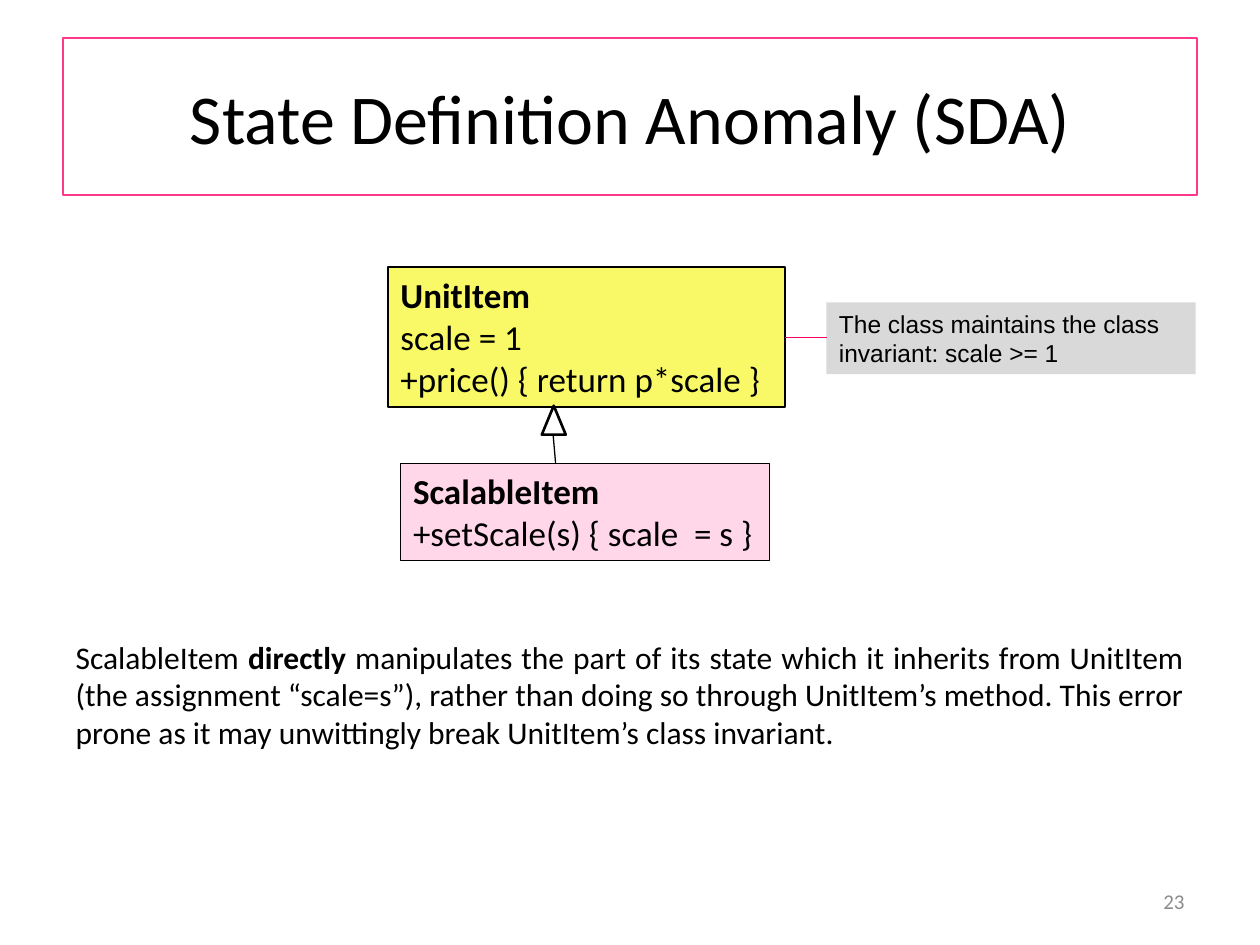
"""Build the State Definition Anomaly slide on a grid of 100 columns by 75 rows."""
from pptx import Presentation
from pptx import util as u
from pptx.dml.color import RGBColor
from pptx.enum import shapes, text
from pptx.oxml import ns, xmlchemy

CELL = u.Inches(0.1)
COLUMNS, ROWS = 100, 75
MARGIN, CONTENT = 5, 90

BLACK = RGBColor(0x00, 0x00, 0x00)
GREY = RGBColor(0x8C, 0x8C, 0x8C)
SILVER = RGBColor(0xD9, 0xD9, 0xD9)
YELLOW = RGBColor(0xF9, 0xF9, 0x67)
ROSE = RGBColor(0xFF, 0xD7, 0xE8)
PINK = RGBColor(0xFF, 0x38, 0x8C)
CRIMSON = RGBColor(0xF9, 0x00, 0x69)

TITLE = "State Definition Anomaly (SDA)"
EXPLANATION = [
    ("ScalableItem ", False),
    ("directly", True),
    (" manipulates the part of its state which it inherits from UnitItem "
     "(the assignment “scale=s”), rather than doing so through UnitItem’s method. "
     "This error prone as it may unwittingly break UnitItem’s class invariant. ", False),
]


def grid(*cells):
    """Turn columns and rows into lengths."""
    return [u.Emu(round(cell * CELL)) for cell in cells]


def write(shape, paragraphs, size, font="Calibri", color=BLACK, wrap=True,
          align=text.PP_ALIGN.LEFT, anchor=text.MSO_ANCHOR.TOP,
          fit=text.MSO_AUTO_SIZE.NONE):
    """Fill a shape with paragraphs, each a list of (wording, bold) runs."""
    frame = shape.text_frame
    frame.word_wrap, frame.auto_size, frame.vertical_anchor = wrap, fit, anchor
    for index, runs in enumerate(paragraphs):
        paragraph = frame.add_paragraph() if index else frame.paragraphs[0]
        paragraph.alignment = align
        for wording, bold in runs:
            run = paragraph.add_run()
            run.text = wording
            run.font.name, run.font.size, run.font.bold = font, u.Pt(size), bold
            run.font.color.rgb = color


def place(shape, *cells):
    """Move a placeholder to a place on the grid."""
    shape.left, shape.top, shape.width, shape.height = grid(*cells)
    return shape


def outline(shape, color, width):
    """Draw the line of a shape or connector."""
    shape.line.color.rgb = color
    shape.line.width = u.Pt(width)


def add_figure(slide, kind, cells, fill=None, line_width=None):
    """Add a preset shape without shadow."""
    shape = slide.shapes.add_shape(kind, *grid(*cells))
    shape.shadow.inherit = False
    if fill is None:
        shape.fill.background()
    else:
        shape.fill.solid()
        shape.fill.fore_color.rgb = fill
    if line_width is None:
        shape.line.fill.background()
    else:
        outline(shape, BLACK, line_width)
    return shape


def add_class(slide, cells, fill, name, *members):
    """Add a class box with a bold name above its members."""
    box = add_figure(slide, shapes.MSO_SHAPE.RECTANGLE, cells, fill, 0.75)
    lines = [[(name, True)]] + [[(member, False)] for member in members]
    write(box, lines, 20, wrap=False, fit=text.MSO_AUTO_SIZE.SHAPE_TO_FIT_TEXT)


def add_link(slide, cells, color):
    """Add a thin straight connector without shadow."""
    link = slide.shapes.add_connector(shapes.MSO_CONNECTOR.STRAIGHT, *grid(*cells))
    outline(link, color, 0.75)
    link._element.spPr.append(xmlchemy.OxmlElement("a:effectLst"))


def add_explanation(slide):
    """Write the justified body text without a bullet."""
    body = place(slide.placeholders[1], MARGIN, 50.1, CONTENT, 18.1)
    write(body, [EXPLANATION], 18, align=text.PP_ALIGN.JUSTIFY)
    properties = body.text_frame.paragraphs[0]._p.get_or_add_pPr()
    properties.set("marL", "0")
    properties.set("indent", "0")
    properties.append(properties.makeelement(ns.qn("a:buNone"), {}))


def add_diagram(slide):
    """Draw the two classes, their inheritance arrow and the invariant note."""
    add_class(slide, (31.8, 36.8, 29.3, 7.7), ROSE,
              "ScalableItem", "+setScale(s) { scale  = s }")
    add_class(slide, (30.8, 21.2, 31.5, 11.1), YELLOW,
              "UnitItem", "scale = 1", "+price() { return p*scale }")
    add_figure(slide, shapes.MSO_SHAPE.ISOSCELES_TRIANGLE,
               (43, 32.2, 1.9, 2.3), line_width=1.5)
    add_link(slide, (44.1, 36.8, 43.9, 34.5), BLACK)
    note = add_figure(slide, shapes.MSO_SHAPE.RECTANGLE, (65.6, 24, 29.3, 5.7), SILVER)
    write(note, [[("The class maintains the class invariant: scale >= 1", False)]], 14,
          font="Arial", fit=text.MSO_AUTO_SIZE.SHAPE_TO_FIT_TEXT)
    add_link(slide, (62.3, 26.8, 65.6, 26.8), CRIMSON)


def main():
    """Build and save the slide."""
    presentation = Presentation()
    presentation.slide_width, presentation.slide_height = grid(COLUMNS, ROWS)
    slide = presentation.slides.add_slide(presentation.slide_layouts[1])
    title = place(slide.shapes.title, MARGIN, 3, CONTENT, 12.5)
    outline(title, PINK, 1)
    write(title, [[(TITLE, False)]], 40, align=text.PP_ALIGN.CENTER,
          anchor=text.MSO_ANCHOR.MIDDLE)
    add_explanation(slide)
    number = slide.shapes.add_textbox(*grid(71.7, 69.5, 23.3, 4))
    write(number, [[("23", False)]], 12, color=GREY, align=text.PP_ALIGN.RIGHT,
          anchor=text.MSO_ANCHOR.MIDDLE)
    add_diagram(slide)
    presentation.save("out.pptx")


if __name__ == "__main__":
    main()
